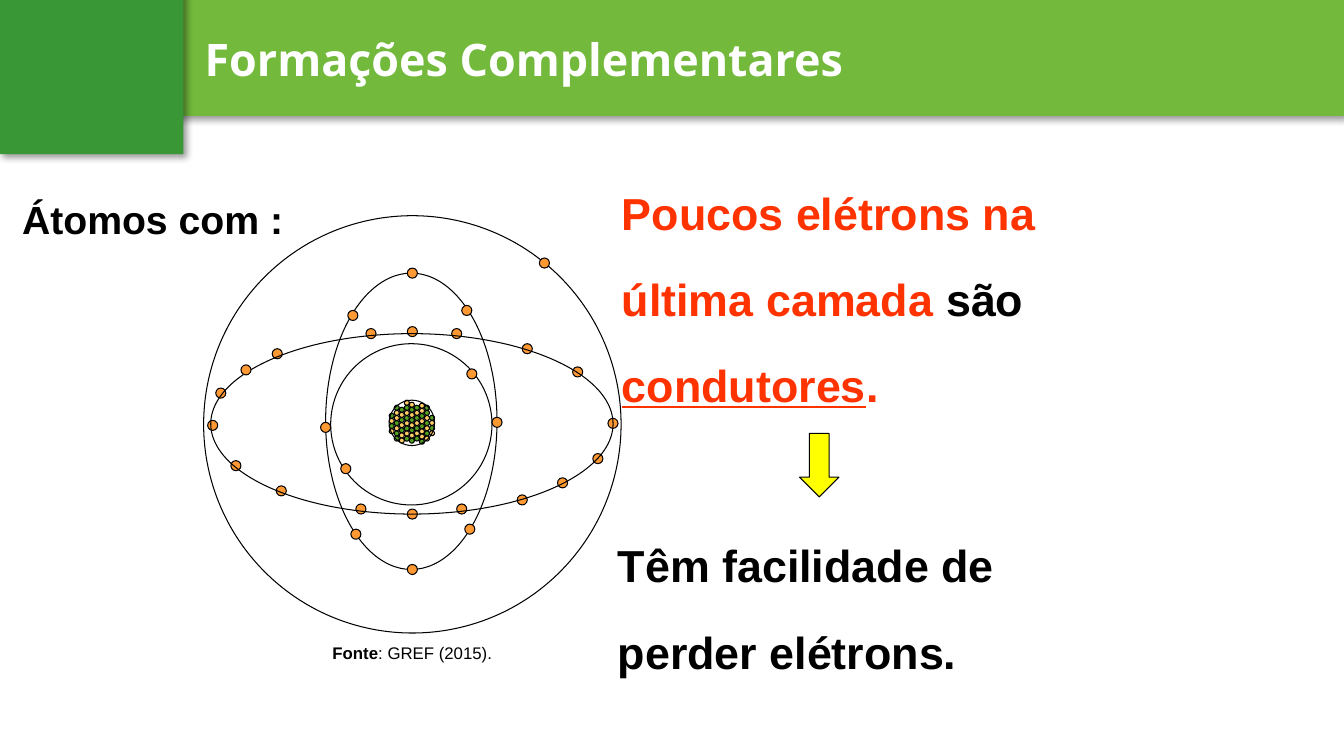
from lxml import etree
from pptx import Presentation
from pptx import util as u
from pptx.dml.color import RGBColor
from pptx.enum import shapes, text
from pptx.oxml.ns import qn

PX = 9144  # 100 px to the inch
C = dict(band="72B93C", square="399736", white="FFFFFF", black="000000", red="FF3300",
         electron="FF9933", G="54A021", Y="FFCC66", arrow="FFFF00")

TITLE = "Formações Complementares"
BAND, SQUARE = (141, 0, 1192, 115), (0, -8, 182, 161)
TITLE_BOX, ARROW = (193, 26, 1082, 64), (793, 430, 39, 63)

# Nucleus columns, left to right: top of the first particle, colours downwards
NUCLEUS = (386, 397, 45, 45)
COLUMNS = [(410, "GYGY"), (402, "GYYGYGG"), (404, "GYGYGYY"), (397, "YGYGYGYG"),
           (399, "YGYGYGYG"), (402, "GYGYGYG"), (400, "YYGYGYYG"), (402, "GGYGYGY"),
           (412, "GYGY")]
PARTICLE, COLUMN_STEP, ROW_STEP = 5, 5, 5.1

# Orbits: box, electrons under the line, electrons over the line
ELECTRON = 10
ORBITS = [
    ((328, 341, 160, 160), [], [(338, 460), (463, 366)]),
    ((323, 271, 170, 294), [], [(404, 266), (404, 560), (348, 525), (461, 520),
                                (345, 308), (458, 303), (318, 419), (488, 414)]),
    ((209, 331, 399, 179),
     [(270, 346), (603, 415), (206, 417), (404, 324), (404, 505), (518, 341),
      (513, 491), (274, 482), (229, 457), (214, 385), (568, 364), (588, 450),
      (453, 500), (448, 326), (363, 326), (353, 500), (553, 474)],
     [(239, 362)]),
    ((202, 214, 414, 414), [], [(535, 256)]),
]

# Texts: box, vertical inset, paragraph format, runs with their font format
BOLD28 = dict(size=u.Pt(28), bold=True)
BOLD32 = dict(size=u.Pt(32), bold=True)
WIDE = dict(line_spacing=1.6)
TEXTS = [
    ((12, 161, 342, 57), 5, WIDE, [("Átomos com :", "black", BOLD28)]),
    ((607, 147, 533, 236), 5, WIDE, [
        ("Poucos elétrons na última camada ", "red", BOLD32),
        ("são ", "black", BOLD32),
        ("condutores", "red", dict(BOLD32, underline=True)),
        (".", "red", BOLD32)]),
    ((603, 497, 484, 150), 5, WIDE,
     [("Têm facilidade de perder elétrons.", "black", BOLD32)]),
    ((251, 628, 316, 40), 10, dict(alignment=text.PP_ALIGN.CENTER), [
        ("Fonte", "black", dict(size=u.Pt(12), bold=True)),
        (": GREF (2015).", "black", dict(size=u.Pt(12), bold=False))]),
]


def emu(box):
    return [round(v * PX) for v in box]


def set_all(obj, **values):
    for name, value in values.items():
        setattr(obj, name, value)


def add_shadow(props):
    effects = props.find(qn("a:effectLst"))
    if effects is None:
        effects = etree.Element(qn("a:effectLst"))
        fill = props.find(qn("a:solidFill"))
        fill.addnext(effects)
    outer = etree.SubElement(effects, qn("a:outerShdw"), blurRad=str(u.Pt(5)),
                             dist=str(u.Pt(3)), dir="2700000", algn="tl", rotWithShape="0")
    color = etree.SubElement(outer, qn("a:srgbClr"), val=C["black"])
    etree.SubElement(color, qn("a:alpha"), val="40000")


def add_shape(kind, box, fill=None, outlined=True):
    sp = s.shapes.add_shape(kind, *emu(box))
    sp.shadow.inherit = False
    if fill:
        sp.fill.solid()
        sp.fill.fore_color.rgb = RGBColor.from_string(C[fill])
    else:
        sp.fill.background()
    if outlined:
        sp.line.color.rgb = RGBColor.from_string(C["black"])
        sp.line.width = u.Pt(0.75)
    else:
        sp.line.fill.background()
    return sp


def write(sp, inset, paragraph, runs, face="Arial", anchor=text.MSO_ANCHOR.TOP):
    tf = sp.text_frame
    set_all(tf, word_wrap=True, vertical_anchor=anchor, margin_left=10 * PX,
            margin_right=10 * PX, margin_top=inset * PX, margin_bottom=inset * PX)
    p = tf.paragraphs[0]
    set_all(p, **paragraph)
    for words, color, font in runs:
        r = p.add_run()
        r.text = words
        set_all(r.font, name=face, **font)
        r.font.color.rgb = RGBColor.from_string(C[color])


def add_circles(points, size, fill):
    for x, y in points:
        add_shape(OVAL, (x, y, size, size), fill)


OVAL = shapes.MSO_SHAPE.OVAL
prs = Presentation()
set_all(prs, slide_width=1333 * PX, slide_height=750 * PX)
s = prs.slides.add_slide(prs.slide_layouts[5])

# Header
band = add_shape(shapes.MSO_SHAPE.RECTANGLE, BAND, "band", False)
add_shadow(band._element.spPr)
title = s.shapes.title
band._element.addnext(title._element)
set_all(title, **dict(zip(("left", "top", "width", "height"), emu(TITLE_BOX))))
write(title, 5, dict(alignment=text.PP_ALIGN.LEFT), [(TITLE, "white", BOLD32)],
      "Open Sans", text.MSO_ANCHOR.MIDDLE)
add_shadow(title.text_frame.paragraphs[0].runs[0].font._element)
square = add_shape(shapes.MSO_SHAPE.RECTANGLE, SQUARE, "square", False)
add_shadow(square._element.spPr)

# Nucleus
for column, (top, colors) in enumerate(COLUMNS):
    for row, color in enumerate(colors):
        add_circles([(NUCLEUS[0] + column * COLUMN_STEP, top + row * ROW_STEP)],
                    PARTICLE, color)
add_shape(OVAL, NUCLEUS)

# Orbits and electrons
for box, under, over in ORBITS:
    add_circles(under, ELECTRON, "electron")
    add_shape(OVAL, box)
    add_circles(over, ELECTRON, "electron")

# Texts and arrow
for box, inset, paragraph, runs in TEXTS:
    write(s.shapes.add_textbox(*emu(box)), inset, paragraph, runs)
add_shape(shapes.MSO_SHAPE.DOWN_ARROW, ARROW, "arrow")

prs.save("out.pptx")
